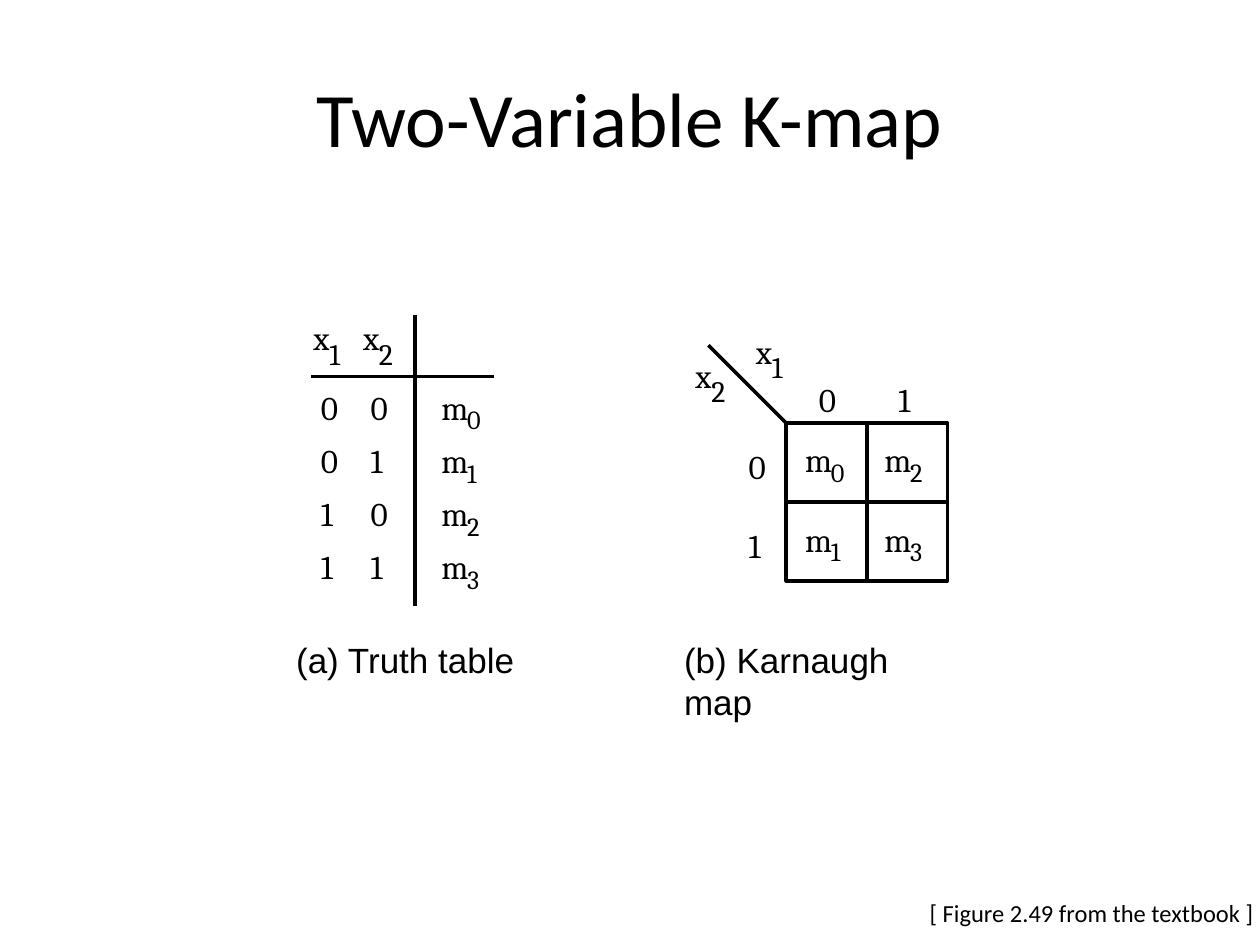
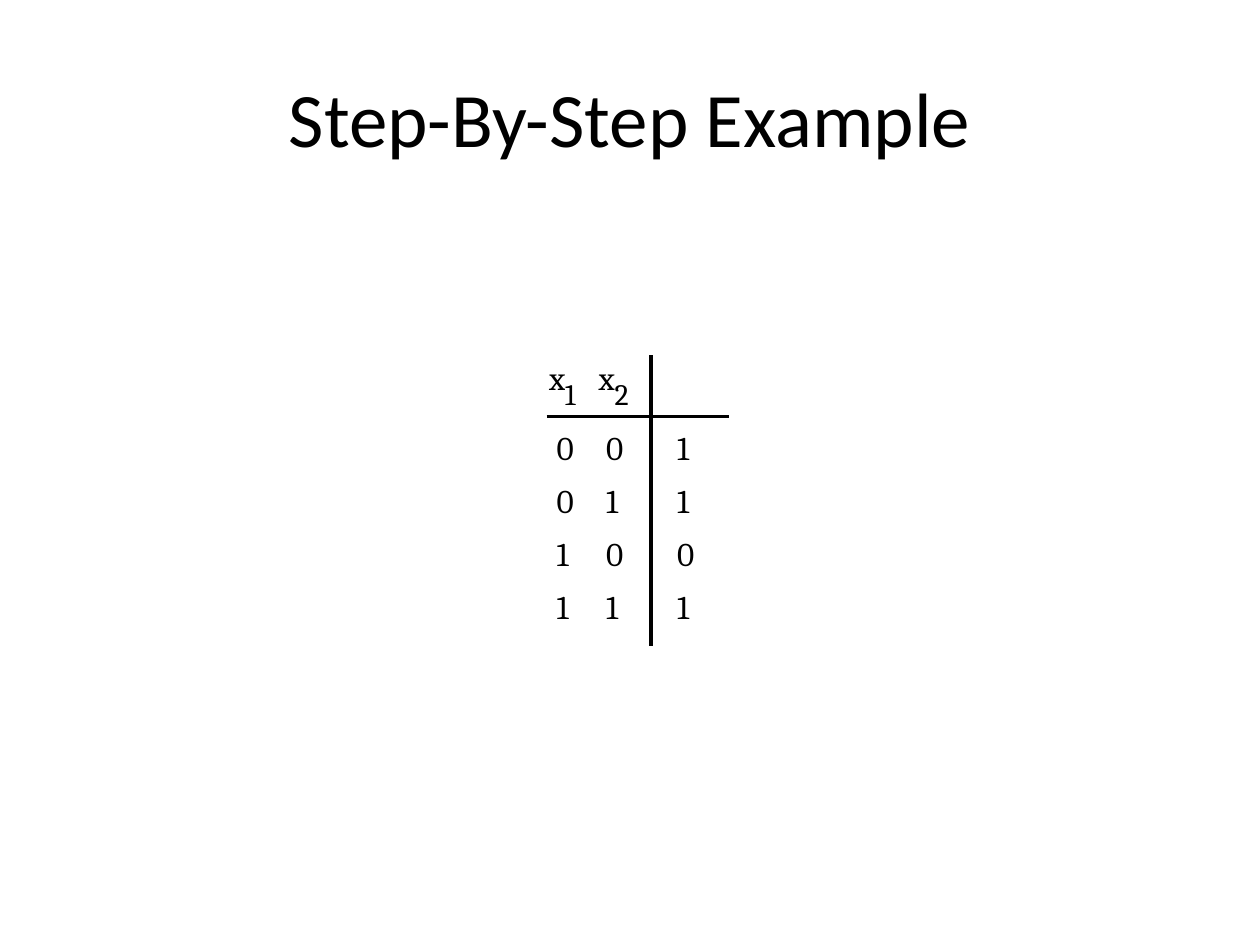
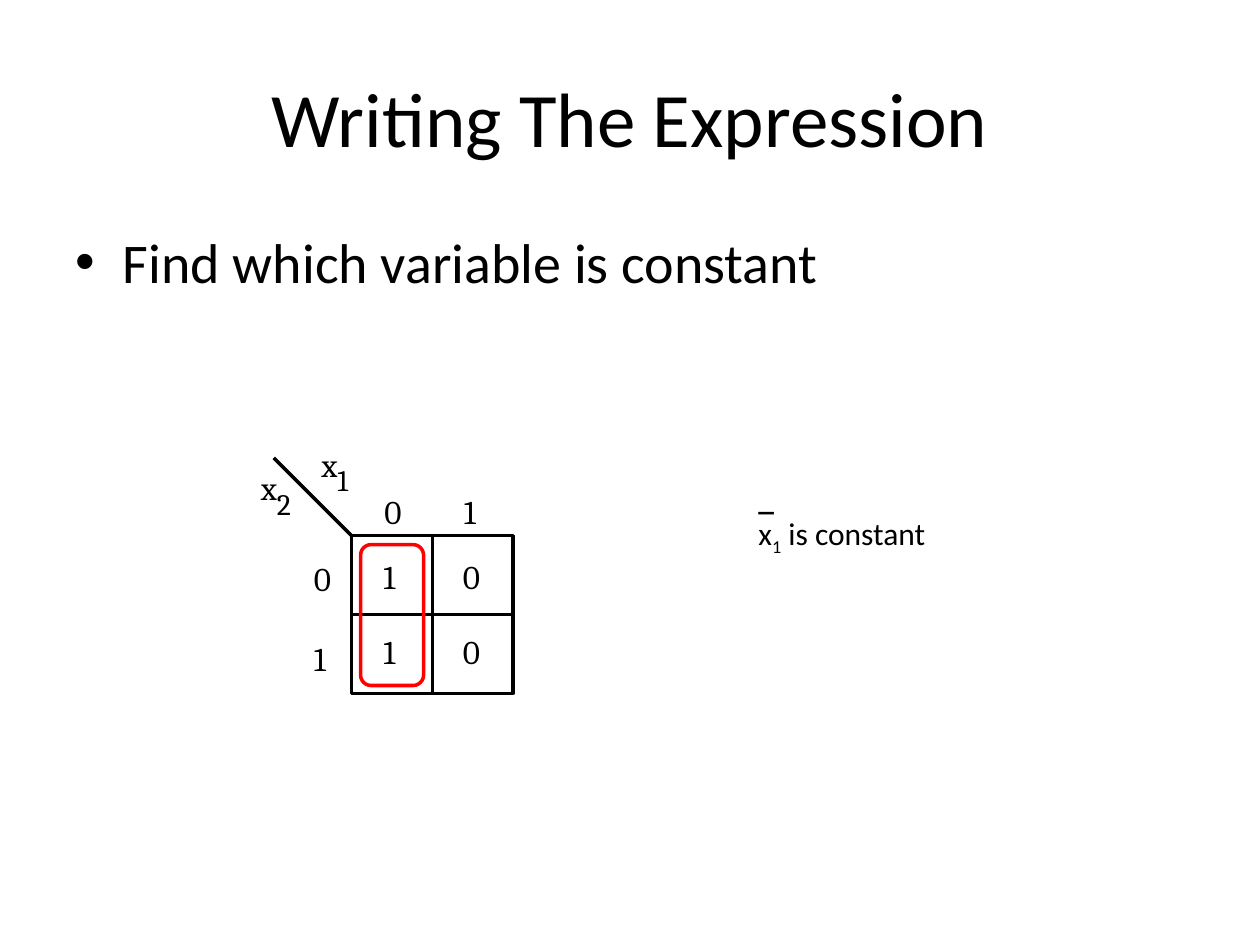
from dataclasses import dataclass

from lxml.etree import SubElement
from pptx import Presentation
from pptx.dml.color import RGBColor
from pptx.enum.shapes import MSO_CONNECTOR, MSO_SHAPE
from pptx.enum.text import MSO_ANCHOR, MSO_AUTO_SIZE, PP_ALIGN
from pptx.oxml.ns import qn
from pptx.util import Cm, Pt

# Shared style
BLACK, WHITE, RED = "000000", "FFFFFF", "FF0000"
SANS, SERIF, CAPTION = "Calibri", "Cambria", "Arial"
LINE_WIDTH = 2
TITLE_ONLY, TITLE_AND_BODY = 5, 1
TITLE_BOX = (1.27, 0.76, 22.86, 3.18)
BODY_BOX = (1.27, 4.45, 22.86, 12.57)


@dataclass
class Subscript:
    size: float
    dx: float
    dy: float


# Each letter has its own subscript size and offset
SUBSCRIPTS = {"x": Subscript(17, 0.32, 0.36), "m": Subscript(15, 0.52, 0.34)}


@dataclass
class TruthTable:
    left: float
    top: float
    values: list[str]


@dataclass
class KMap:
    left: float
    top: float
    cells: list[list[str]]
    inset_x: float
    inset_y: float
    row_step: float


def rgb(color: str) -> RGBColor:
    return RGBColor.from_string(color)


def set_font(font, name: str, size: float, bold: bool = False) -> None:
    font.name, font.size, font.bold = name, Pt(size), bold
    font.color.rgb = rgb(BLACK)


def place(shape, box: tuple) -> None:
    shape.left, shape.top, shape.width, shape.height = map(Cm, box)


# Drawing helpers
def add_text(s, text: str, box: tuple, name: str, size: float, *,
             inset: bool = False, wrap: bool = False, bold: bool = False):
    tf = s.shapes.add_textbox(*map(Cm, box)).text_frame
    tf.word_wrap = wrap
    tf.auto_size = MSO_AUTO_SIZE.SHAPE_TO_FIT_TEXT
    if not inset:
        tf.margin_left = tf.margin_top = tf.margin_right = tf.margin_bottom = 0
    p = tf.paragraphs[0]
    p.text = text
    set_font(p.font, name, size, bold)
    return p


def add_symbol(s, symbol: str, x: float, y: float) -> None:
    """Draw a digit, or a letter followed by its subscript."""
    base, index = symbol[0], symbol[1:]
    add_text(s, base, (x, y, 0.66 if base == "m" else 0.5, 0.81), SERIF, 19)
    if index:
        sub = SUBSCRIPTS[base]
        add_text(s, index, (x + sub.dx, y + sub.dy, 0.42, 0.68), SERIF, sub.size)


def add_line(s, x1: float, y1: float, x2: float, y2: float):
    line = s.shapes.add_connector(MSO_CONNECTOR.STRAIGHT, *map(Cm, (x1, y1, x2, y2)))
    line.line.color.rgb = rgb(BLACK)
    line.line.width = Pt(LINE_WIDTH)
    SubElement(line._element.spPr, qn("a:effectLst"))
    return line


def add_outline(s, kind, box: tuple, color: str, fill: str | None = None):
    shape = s.shapes.add_shape(kind, *map(Cm, box))
    shape.shadow.inherit = False
    if fill:
        shape.fill.solid()
        shape.fill.fore_color.rgb = rgb(fill)
    else:
        shape.fill.background()
    shape.line.color.rgb = rgb(color)
    shape.line.width = Pt(LINE_WIDTH)
    return shape


def add_slide(prs, title: str, layout: int = TITLE_ONLY):
    s = prs.slides.add_slide(prs.slide_layouts[layout])
    place(s.shapes.title, TITLE_BOX)
    tf = s.shapes.title.text_frame
    tf.vertical_anchor = MSO_ANCHOR.MIDDLE
    p = tf.paragraphs[0]
    p.text, p.alignment = title, PP_ALIGN.CENTER
    set_font(p.font, SANS, 44)
    return s


def add_truth_table(s, table: TruthTable) -> None:
    x, y = table.left, table.top
    add_line(s, x, y + 1.24, x + 3.68, y + 1.24)
    add_line(s, x + 2.1, y, x + 2.1, y + 5.87)
    for col, name in enumerate(("x1", "x2")):
        add_symbol(s, name, x + 0.05 + col, y + 0.05)
    for row, value in enumerate(table.values):
        row_y = y + 1.45 + 1.07 * row
        for col, bit in enumerate(f"{row:02b}"):
            add_symbol(s, bit, x + 0.2 + col, row_y)
        add_symbol(s, value, x + 2.63, row_y)


def add_kmap(s, kmap: KMap) -> None:
    x, y, step = kmap.left, kmap.top, 1.6
    # Grid: square, two middle lines and the corner diagonal
    square = add_outline(s, MSO_SHAPE.RECTANGLE, (x, y, 3.25, 3.18), BLACK, WHITE)
    for begin, end in ((3, 1), (2, 0)):
        line = add_line(s, x, y, x, y)
        line.begin_connect(square, begin)
        line.end_connect(square, end)
    add_line(s, x - 1.57, y - 1.57, x, y)
    # Variables, headings and cells
    add_symbol(s, "x2", x - 1.83, y - 1.37)
    add_symbol(s, "x1", x - 0.61, y - 1.85)
    for i, bit in enumerate("01"):
        add_symbol(s, bit, x - 0.76, y + 0.46 + step * i)
        add_symbol(s, bit, x + 0.66 + step * i, y - 0.89)
    for row, cells in enumerate(kmap.cells):
        for col, cell in enumerate(cells):
            add_symbol(s, cell, x + kmap.inset_x + step * col,
                       y + kmap.inset_y + kmap.row_step * row)


# Slides
def two_variable_slide(prs) -> None:
    s = add_slide(prs, "Two-Variable K-map")
    add_truth_table(s, TruthTable(6.27, 6.35, ["m0", "m1", "m2", "m3"]))
    add_kmap(s, KMap(15.85, 8.53, [["m0", "m2"], ["m1", "m3"]], 0.38, 0.33, 1.6))
    for text, x in (("(a) Truth table", 5.97), ("(b) Karnaugh map", 13.79)):
        add_text(s, text, (x, 12.88, 5.5, 0.84), CAPTION, 20, wrap=True)
    add_text(s, "[ Figure 2.49 from the textbook ]", (18.49, 17.98, 7.09, 0.86),
             SANS, 14, inset=True)


def example_slide(prs) -> None:
    s = add_slide(prs, "Step-By-Step Example")
    add_truth_table(s, TruthTable(11.02, 7.16, ["1", "1", "0", "1"]))


def expression_slide(prs) -> None:
    s = add_slide(prs, "Writing The Expression", TITLE_AND_BODY)
    body = s.placeholders[1]
    place(body, BODY_BOX)
    p = body.text_frame.paragraphs[0]
    p.text = "Find which variable is constant"
    set_font(p.font, SANS, 32)
    kmap = KMap(7.09, 10.8, [["1", "0"], ["1", "0"]], 0.64, 0.41, 1.52)
    add_kmap(s, kmap)
    add_outline(s, MSO_SHAPE.ROUNDED_RECTANGLE,
                (kmap.left + 0.18, kmap.top + 0.18, 1.27, 2.84), RED)
    # Conclusion with a bar over the variable
    p = add_text(s, "x", (15.04, 10.24, 5.92, 1.3), SANS, 18, inset=True, wrap=True)
    r = p.add_run()
    r.text = "1"
    r.font._element.set("baseline", "-25000")
    p.add_run().text = " is constant"
    add_text(s, "_", (15.04, 9.53, 0.94, 1.3), SANS, 18, inset=True, bold=True)


def main() -> None:
    prs = Presentation()
    prs.slide_width, prs.slide_height = Cm(25.4), Cm(19.05)
    two_variable_slide(prs)
    example_slide(prs)
    expression_slide(prs)
    prs.save("out.pptx")


if __name__ == "__main__":
    main()
